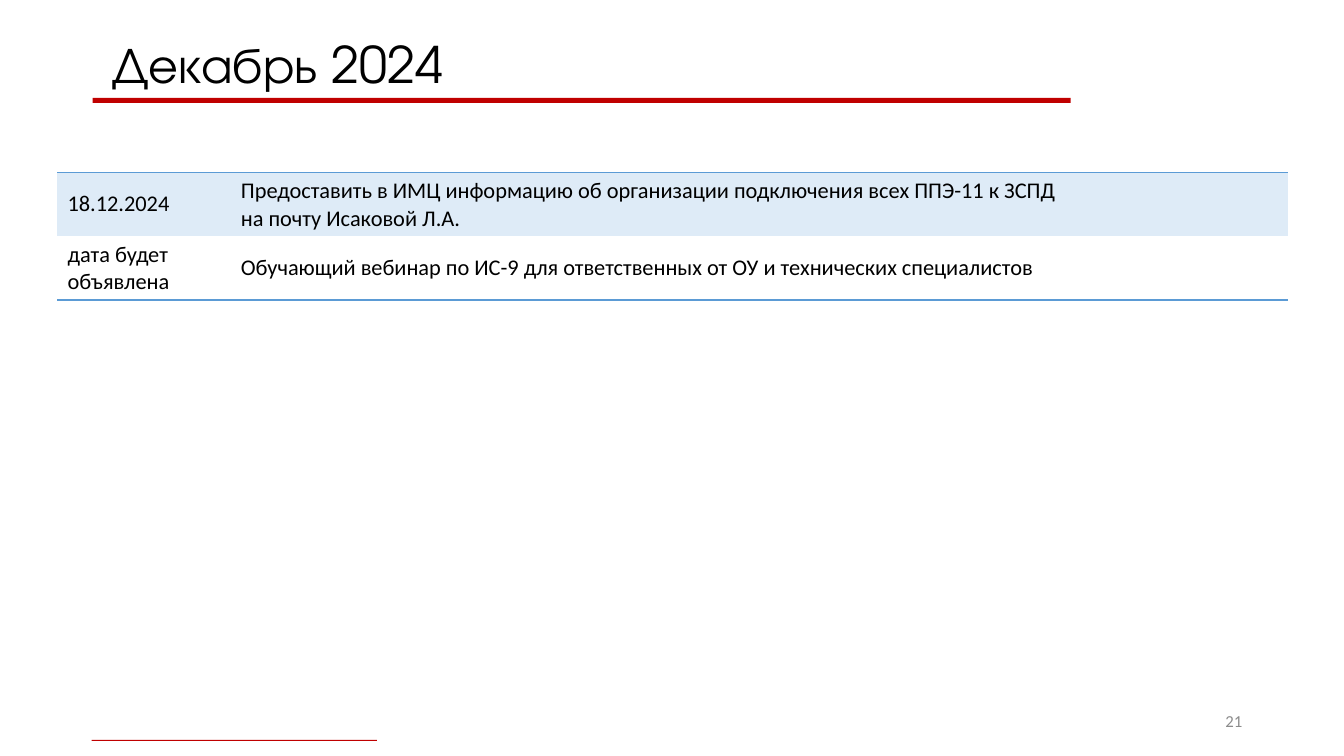
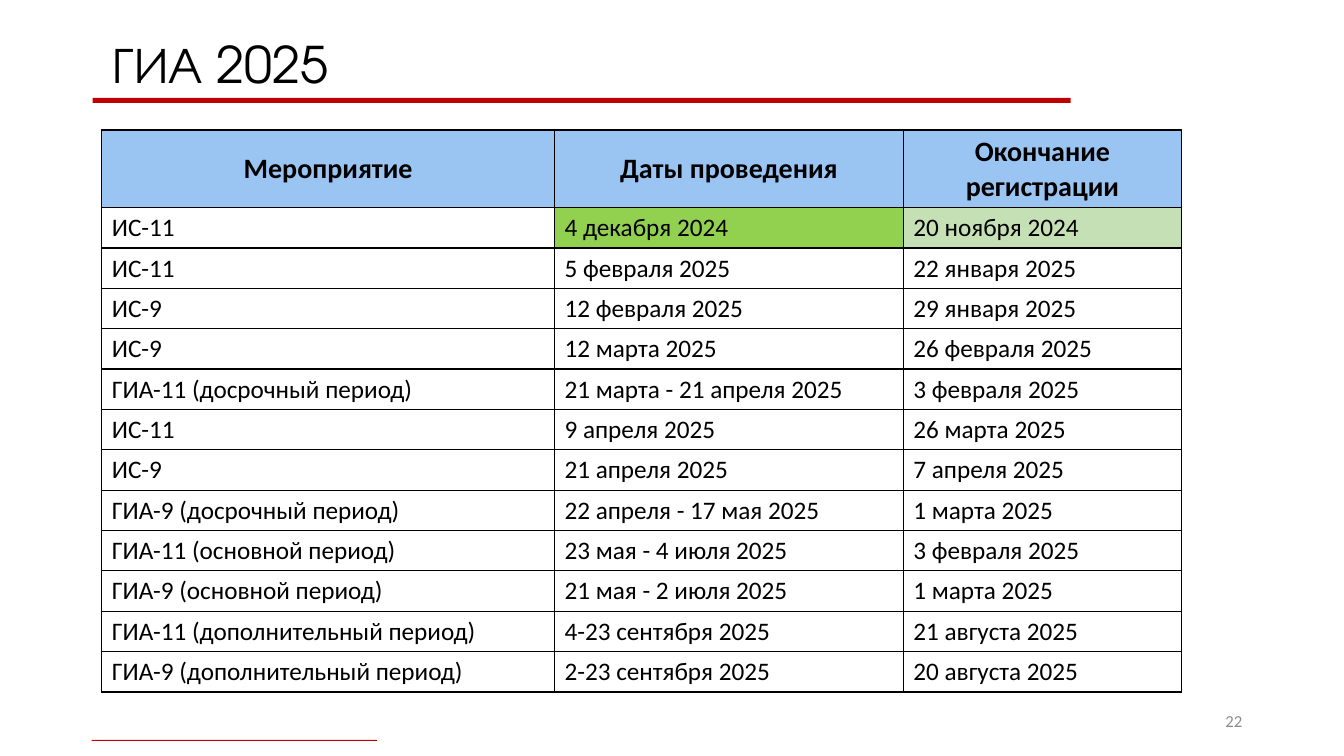
from lxml.etree import SubElement
from pptx import Presentation
from pptx.dml.color import RGBColor
from pptx.enum.shapes import MSO_SHAPE
from pptx.enum.text import MSO_ANCHOR, PP_ALIGN
from pptx.oxml.ns import qn
from pptx.util import Inches, Pt

COLORS = {
    "text": "000000",
    "number": "8C8C8C",
    "band": "C00000",
    "agenda_line": "5B9BD5",
    "agenda_fill": "DEEBF7",
    "grid_line": "000000",
    "header": "9AC4F2",
    "done": "92D050",
    "closed": "C5E0B4",
}
BODY_FONT = "Calibri"
TITLE_FONT = "TeX Gyre Adventor"
BANDS = [(0.92, 0.97, 9.7, 0.05), (0.91, 7.34, 2.83, 0.01)]

AGENDA_TITLE = "Декабрь 2024"
AGENDA = [
    ("18.12.2024",
     "Предоставить в ИМЦ информацию об организации подключения всех ППЭ-11 к ЗСПД\n"
     "на почту Исаковой Л.А."),
    ("дата будет объявлена",
     "Обучающий вебинар по ИС-9 для ответственных от ОУ и технических специалистов"),
]

SCHEDULE_TITLE = "ГИА 2025"
SCHEDULE = [
    ("Мероприятие", "Даты проведения", "Окончание регистрации"),
    ("ИС-11", "4 декабря 2024", "20 ноября 2024"),
    ("ИС-11", "5 февраля 2025", "22 января 2025"),
    ("ИС-9", "12 февраля 2025", "29 января 2025"),
    ("ИС-9", "12 марта 2025", "26 февраля 2025"),
    ("ГИА-11 (досрочный период)", "21 марта - 21 апреля 2025", "3 февраля 2025"),
    ("ИС-11", "9 апреля 2025", "26 марта 2025"),
    ("ИС-9", "21 апреля 2025", "7 апреля 2025"),
    ("ГИА-9 (досрочный период)", "22 апреля - 17 мая 2025", "1 марта 2025"),
    ("ГИА-11 (основной период)", "23 мая - 4 июля 2025", "3 февраля 2025"),
    ("ГИА-9 (основной период)", "21 мая - 2 июля 2025", "1 марта 2025"),
    ("ГИА-11 (дополнительный период)", "4-23 сентября 2025", "21 августа 2025"),
    ("ГИА-9 (дополнительный период)", "2-23 сентября 2025", "20 августа 2025"),
]
SCHEDULE_FILLS = {(1, 1): "done", (1, 2): "closed"}


def rgb(name):
    return RGBColor.from_string(COLORS[name])


def format_text(text_frame, size, color="text", font=BODY_FONT, bold=False,
                alignment=PP_ALIGN.LEFT):
    for paragraph in text_frame.paragraphs:
        paragraph.alignment = alignment
        for run in paragraph.runs:
            run.font.name = font
            run.font.size = Pt(size)
            run.font.bold = bold
            run.font.color.rgb = rgb(color)


def add_bands(slide):
    """Put the red bands on the slide's layout, so that all slides share them."""
    layout_tree = slide.slide_layout.shapes.element
    for box in BANDS:
        band = slide.shapes.add_shape(MSO_SHAPE.RECTANGLE, *map(Inches, box))
        band.shadow.inherit = False
        band.fill.solid()
        band.fill.fore_color.rgb = rgb("band")
        band.line.fill.background()
        layout_tree.append(band.element)


def add_titled_slide(presentation, layout, title_text, number):
    slide = presentation.slides.add_slide(layout)
    title = slide.shapes.title
    title.left, title.top = Inches(1.02), Inches(0.31)
    title.width, title.height = Inches(10.55), Inches(0.71)
    title.text_frame.text = title_text
    title.text_frame.vertical_anchor = MSO_ANCHOR.MIDDLE
    title.text_frame.paragraphs[0].line_spacing = 0.9
    format_text(title.text_frame, 36, font=TITLE_FONT)

    number_box = slide.shapes.add_textbox(Inches(9.42), Inches(6.95), Inches(3), Inches(0.4))
    number_box.text_frame.word_wrap = True
    number_box.text_frame.vertical_anchor = MSO_ANCHOR.MIDDLE
    number_box.text_frame.text = str(number)
    format_text(number_box.text_frame, 12, "number", alignment=PP_ALIGN.RIGHT)
    return slide


def set_borders(cell, color, sides):
    """Draw one-point lines on the given sides (L, R, T, B) and none on the others."""
    properties = cell._tc.get_or_add_tcPr()
    for position, side in enumerate("LRTB"):
        line = SubElement(properties, qn(f"a:ln{side}"), w=str(Pt(1)))
        if side in sides:
            fill = SubElement(line, qn("a:solidFill"))
            SubElement(fill, qn("a:srgbClr"), val=COLORS[color])
        else:
            SubElement(line, qn("a:noFill"))
        properties.insert(position, line)


def add_table(slide, rows, left, top, column_widths, row_heights, style_cell):
    """Add a plain table; style_cell(cell, row, column) returns the name of its fill."""
    table = slide.shapes.add_table(
        len(rows), len(column_widths), Inches(left), Inches(top),
        Inches(sum(column_widths)), Inches(sum(row_heights))).table
    table.first_row = table.horz_banding = False
    for column, width in zip(table.columns, column_widths):
        column.width = Inches(width)
    for row, height in zip(table.rows, row_heights):
        row.height = Inches(height)
    for row_index, texts in enumerate(rows):
        for column_index, text in enumerate(texts):
            cell = table.cell(row_index, column_index)
            cell.text_frame.text = text
            fill = style_cell(cell, row_index, column_index)
            if fill:
                cell.fill.solid()
                cell.fill.fore_color.rgb = rgb(fill)
            else:
                cell.fill.background()


def style_agenda_cell(cell, row, column):
    cell.vertical_anchor = MSO_ANCHOR.MIDDLE
    format_text(cell.text_frame, 16)
    set_borders(cell, "agenda_line", "T" if row == 0 else "B")
    return "agenda_fill" if row == 0 else None


def style_schedule_cell(cell, row, column):
    set_borders(cell, "grid_line", "LRTB")
    if row == 0:
        cell.vertical_anchor = MSO_ANCHOR.MIDDLE
        format_text(cell.text_frame, 20, bold=True, alignment=PP_ALIGN.CENTER)
        return "header"
    format_text(cell.text_frame, 18)
    return SCHEDULE_FILLS.get((row, column))


def main():
    presentation = Presentation()
    presentation.slide_width, presentation.slide_height = Inches(13.33), Inches(7.5)
    layout = presentation.slide_layouts.get_by_name("Title Only")

    agenda = add_titled_slide(presentation, layout, AGENDA_TITLE, 21)
    add_bands(agenda)
    add_table(agenda, AGENDA, 0.57, 1.71, [1.72, 10.48], [0.63] * len(AGENDA),
              style_agenda_cell)

    schedule = add_titled_slide(presentation, layout, SCHEDULE_TITLE, 22)
    add_table(schedule, SCHEDULE, 1.01, 1.29, [4.49, 3.46, 2.76],
              [0.77] + [0.4] * (len(SCHEDULE) - 1), style_schedule_cell)

    presentation.save("out.pptx")


if __name__ == "__main__":
    main()
